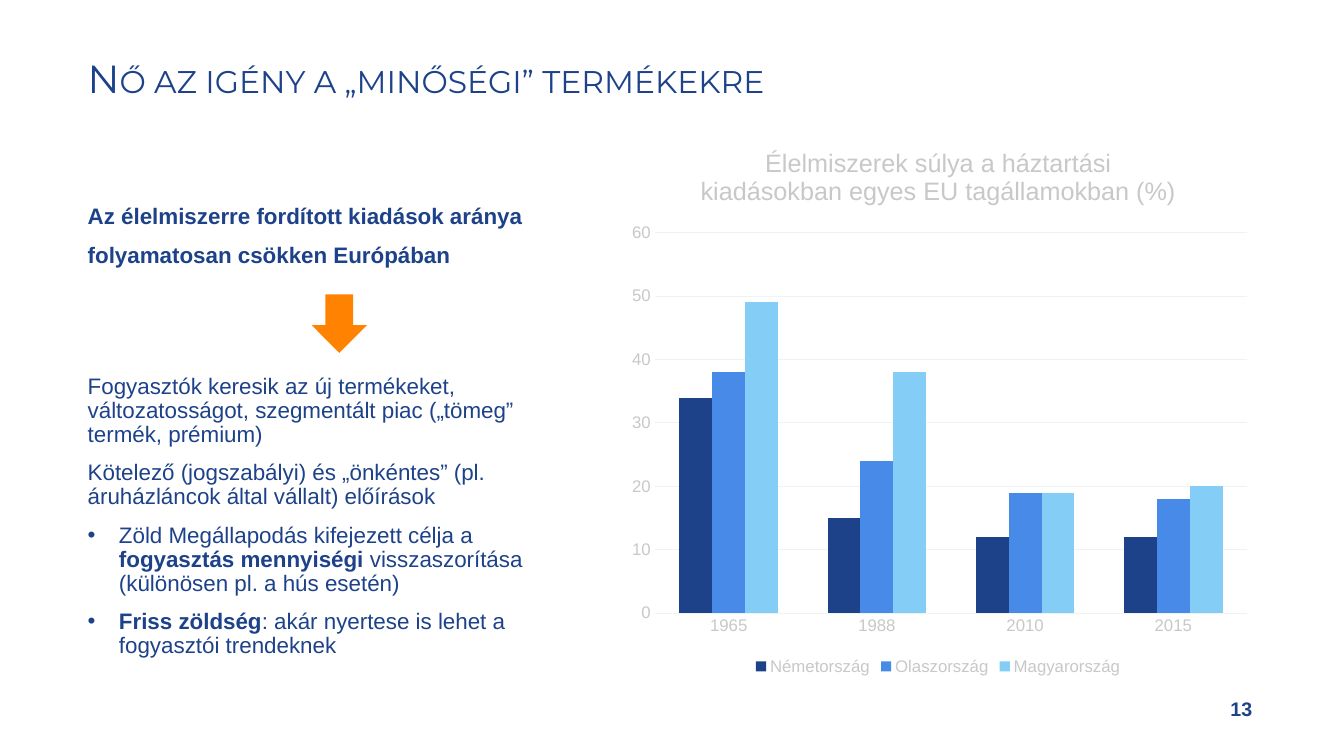
from lxml import etree
from pptx import Presentation
from pptx.chart.data import CategoryChartData
from pptx.dml.color import RGBColor
from pptx.enum.chart import XL_CHART_TYPE as ChartType, XL_LEGEND_POSITION as LegendPos
from pptx.enum.chart import XL_TICK_MARK as Tick
from pptx.enum.shapes import MSO_SHAPE as Shape
from pptx.enum.text import MSO_ANCHOR as Anchor, MSO_AUTO_SIZE as AutoSize, PP_ALIGN as Align
from pptx.oxml.ns import qn
from pptx.util import Inches, Pt

NAVY = RGBColor(0x1D, 0x42, 0x8A)
BLUE = RGBColor(0x47, 0x8A, 0xE7)
SKY = RGBColor(0x83, 0xCD, 0xF6)
ORANGE = RGBColor(0xFF, 0x82, 0x00)
GREY = RGBColor(0xC8, 0xC8, 0xC8)
PALE = RGBColor(0xF2, 0xF2, 0xF2)

LEFT = 0.87
YEARS = ["1965", "1988", "2010", "2015"]
COUNTRIES = [
    ("Németország", (34, 15, 12, 12), NAVY),
    ("Olaszország", (38, 24, 19, 18), BLUE),
    ("Magyarország", (49, 38, 19, 20), SKY),
]


def set_font(font, size, color, bold=False, name="Arial"):
    font.name, font.size, font.bold = name, Pt(size), bold
    font.color.rgb = color


def set_bullet(p, char):
    """Give a paragraph a hanging bullet, or none when char is empty."""
    pPr = p._p.get_or_add_pPr()
    indent = Inches(0.31) if char else 0
    pPr.set("marL", str(indent))
    pPr.set("indent", str(-indent))
    if char:
        etree.SubElement(pPr, qn("a:buChar")).set("char", char)
    else:
        etree.SubElement(pPr, qn("a:buNone"))


def add_runs(p, text, size=16, color=NAVY, bold=False, name="Arial",
             bullet="", align=Align.LEFT, spacing=0.9, before=0):
    """Fill a paragraph; every second part between * marks is bold."""
    set_bullet(p, bullet)
    p.alignment, p.line_spacing, p.space_before = align, spacing, Pt(before)
    for i, part in enumerate(text.split("*")):
        if part:
            r = p.add_run()
            r.text = part
            set_font(r.font, size, color, bold or i % 2 == 1, name)


def setup_frame(s, box, margins=(0, 0, 0, 0), anchor=Anchor.TOP):
    s.left, s.top, s.width, s.height = map(Inches, box)
    tf = s.text_frame
    tf.word_wrap, tf.auto_size, tf.vertical_anchor = True, AutoSize.NONE, anchor
    tf.margin_left, tf.margin_top, tf.margin_right, tf.margin_bottom = map(Inches, margins)
    return tf


def fill_body(s, box, items, **fmt):
    """Write (text, bullet) items into a body placeholder."""
    tf = setup_frame(s, box)
    for i, (text, bullet) in enumerate(items):
        p = tf.add_paragraph() if i else tf.paragraphs[0]
        add_runs(p, text, bullet=bullet, before=10 if i else 0, **fmt)


def add_down_arrow(slide, box):
    s = slide.shapes.add_shape(Shape.DOWN_ARROW, *map(Inches, box))
    s.shadow.inherit = False
    s.fill.solid()
    s.fill.fore_color.rgb = ORANGE
    s.line.fill.background()


def place_plot(chart, **fractions):
    """Fix the inner plot area as fractions of the chart."""
    area = chart._chartSpace.chart.plotArea
    for old in area.findall(qn("c:layout")):
        area.remove(old)
    layout = etree.Element(qn("c:layout"))
    area.insert(0, layout)
    manual = etree.SubElement(layout, qn("c:manualLayout"))
    settings = {"layoutTarget": "inner", "xMode": "edge", "yMode": "edge", **fractions}
    for tag, value in settings.items():
        etree.SubElement(manual, qn(f"c:{tag}")).set("val", str(value))


def style_axis(axis):
    axis.major_tick_mark = axis.minor_tick_mark = Tick.NONE
    set_font(axis.tick_labels.font, 12, GREY)


def add_spending_chart(slide, box):
    data = CategoryChartData()
    data.categories = YEARS
    for name, values, _ in COUNTRIES:
        data.add_series(name, values)
    chart = slide.shapes.add_chart(
        ChartType.COLUMN_CLUSTERED, *map(Inches, box), data).chart
    set_font(chart.font, 10, GREY)

    tf = chart.chart_title.text_frame
    lines = ["Élelmiszerek súlya a háztartási", "kiadásokban egyes EU tagállamokban (%)"]
    for i, line in enumerate(lines):
        p = tf.add_paragraph() if i else tf.paragraphs[0]
        p.alignment = Align.CENTER
        r = p.add_run()
        r.text = line
        set_font(r.font, 18, GREY)
    chart.chart_title.include_in_layout = False

    plot = chart.plots[0]
    plot.gap_width, plot.overlap, plot.vary_by_categories = 150, 0, False
    for series, (_, _, color) in zip(plot.series, COUNTRIES):
        series.format.fill.solid()
        series.format.fill.fore_color.rgb = color

    years, percent = chart.category_axis, chart.value_axis
    style_axis(years)
    style_axis(percent)
    percent.minimum_scale, percent.maximum_scale, percent.major_unit = 0, 60, 10
    percent.format.line.fill.background()
    for line in (years.format.line, percent.major_gridlines.format.line):
        line.color.rgb, line.width = PALE, Pt(0.75)

    chart.has_legend = True
    chart.legend.position = LegendPos.BOTTOM
    chart.legend.include_in_layout = False
    set_font(chart.legend.font, 12, GREY)
    place_plot(chart, x=0.06, y=0.19, w=0.92, h=0.69)


def main():
    prs = Presentation()
    prs.slide_width, prs.slide_height = Inches(13.33), Inches(7.5)
    slide = prs.slides.add_slide(prs.slide_layouts[3])
    title, claim, trends = slide.placeholders

    p = setup_frame(title, (LEFT, 0.59, 7.7, 1.75)).paragraphs[0]
    add_runs(p, "Nő az igény a „minőségi” termékekre", size=28, name="Montserrat")
    p.runs[0].font._element.set("cap", "small")

    fill_body(claim, (LEFT, 2.04, 5.01, 1.67), [
        ("Az élelmiszerre fordított kiadások aránya", ""),
        ("folyamatosan csökken Európában", ""),
    ], bold=True)
    fill_body(trends, (LEFT, 3.72, 5.01, 2.92), [
        ("Fogyasztók keresik az új termékeket, változatosságot, "
         "szegmentált piac („tömeg” termék, prémium)", ""),
        ("Kötelező (jogszabályi) és „önkéntes” (pl. áruházláncok által vállalt) előírások", ""),
        ("Zöld Megállapodás kifejezett célja a* fogyasztás mennyiségi *"
         "visszaszorítása (különösen pl. a hús esetén)", "•"),
        ("*Friss zöldség*: akár nyertese is lehet a fogyasztói trendeknek", "•"),
    ])

    add_spending_chart(slide, (6.11, 1.27, 6.39, 5.47))
    add_down_arrow(slide, (3.09, 2.92, 0.55, 0.58))

    box = (9.42, 6.83, 3, 0.4)
    number = slide.shapes.add_textbox(*map(Inches, box))
    tf = setup_frame(number, box, margins=(0.1, 0.05, 0, 0.05), anchor=Anchor.MIDDLE)
    add_runs(tf.paragraphs[0], "13", size=14, bold=True, align=Align.RIGHT, spacing=1.0)

    prs.save("out.pptx")


if __name__ == "__main__":
    main()
